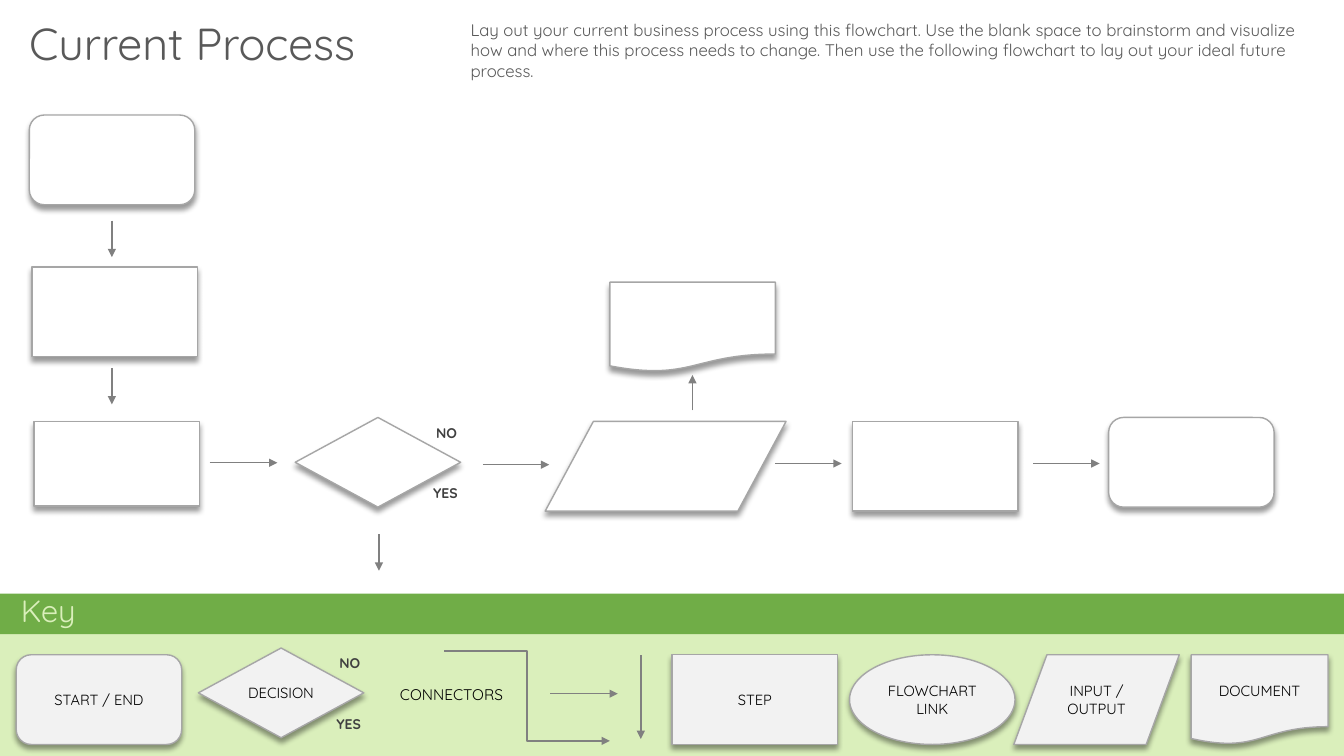
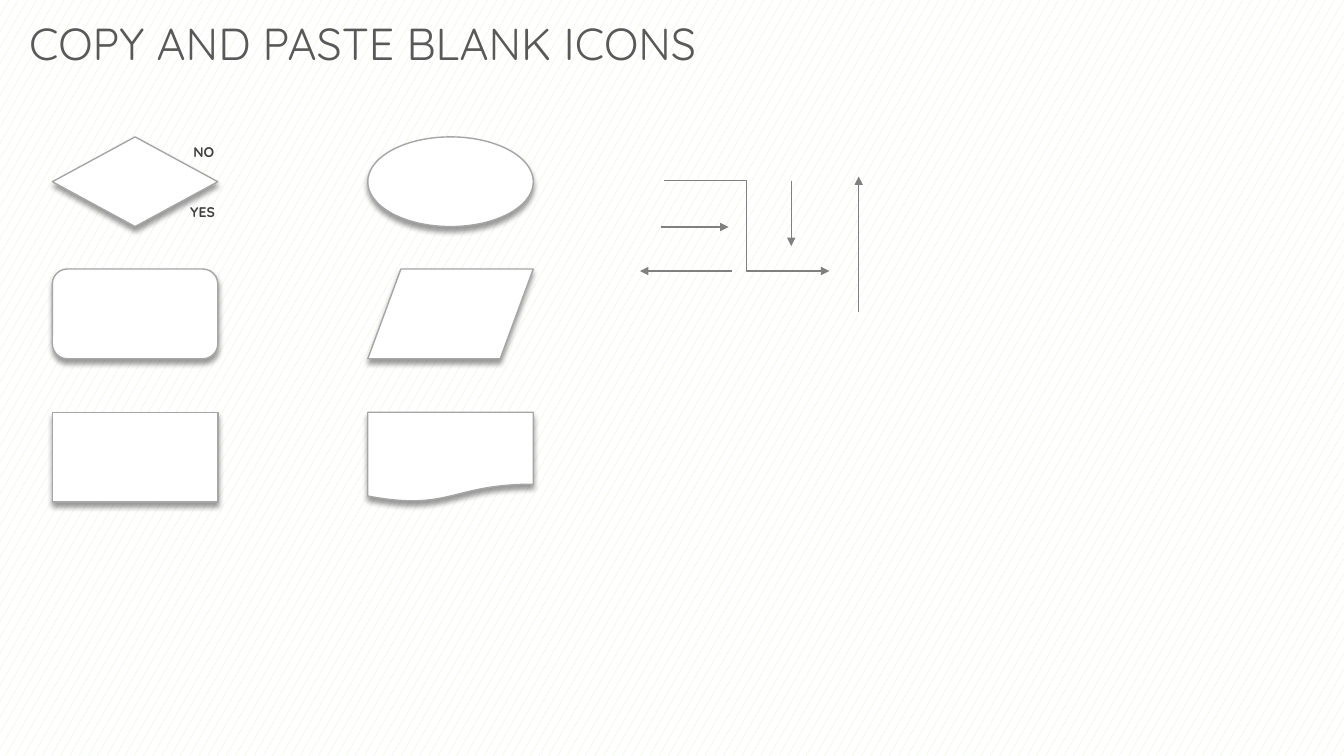
from dataclasses import dataclass

from lxml import etree
from pptx import Presentation
from pptx.dml.color import RGBColor
from pptx.enum.dml import MSO_PATTERN
from pptx.enum.shapes import MSO_CONNECTOR, MSO_SHAPE
from pptx.enum.text import MSO_ANCHOR, MSO_AUTO_SIZE, PP_ALIGN
from pptx.oxml.ns import qn
from pptx.util import Cm, Pt

STEP = MSO_SHAPE.FLOWCHART_PROCESS
TERMINAL = MSO_SHAPE.FLOWCHART_ALTERNATE_PROCESS
DATA = MSO_SHAPE.FLOWCHART_DATA
DOCUMENT = MSO_SHAPE.FLOWCHART_DOCUMENT
DECISION = MSO_SHAPE.FLOWCHART_DECISION
ELLIPSE = MSO_SHAPE.OVAL
RECTANGLE = MSO_SHAPE.RECTANGLE
STRAIGHT = MSO_CONNECTOR.STRAIGHT
ELBOW = MSO_CONNECTOR.ELBOW
CONFETTI = MSO_PATTERN.SMALL_CONFETTI
LEFT, CENTER = PP_ALIGN.LEFT, PP_ALIGN.CENTER
TOP, MIDDLE = MSO_ANCHOR.TOP, MSO_ANCHOR.MIDDLE
NO_FIT = MSO_AUTO_SIZE.NONE


@dataclass(frozen=True)
class Theme:
    font: str = "Quicksand"
    white: RGBColor = RGBColor(0xFF, 0xFF, 0xFF)
    black: RGBColor = RGBColor(0, 0, 0)
    heading: RGBColor = RGBColor(0x59, 0x59, 0x59)
    label: RGBColor = RGBColor(0x40, 0x40, 0x40)
    outline: RGBColor = RGBColor(0xA6, 0xA6, 0xA6)
    arrow: RGBColor = RGBColor(0x80, 0x80, 0x80)
    key_icon: RGBColor = RGBColor(0xF2, 0xF2, 0xF2)
    green: RGBColor = RGBColor(0x70, 0xAD, 0x47)
    pale_green: RGBColor = RGBColor(0xDA, 0xEF, 0xBB)
    title_size: float = 32
    key_size: float = 22
    body_size: float = 12
    connector_size: float = 11
    icon_size: float = 10.5
    label_size: float = 10


theme = Theme()


def write(shape, text, size, color, bold=False, align=LEFT, anchor=TOP, inset=None, wrap=True):
    frame = shape.text_frame
    frame.auto_size = NO_FIT
    frame.word_wrap = wrap
    frame.vertical_anchor = anchor
    if inset is not None:
        frame.margin_left = frame.margin_right = Cm(inset)
        frame.margin_top = frame.margin_bottom = Cm(inset)
    paragraph = frame.paragraphs[0]
    paragraph.alignment = align
    run = paragraph.add_run()
    run.text = text
    run.font.name = theme.font
    run.font.size = Pt(size)
    run.font.bold = bold
    run.font.color.rgb = color


ICON_WIDTH, ICON_HEIGHT = 4.17, 2.26
TEXT_INSET = 0.05
KEY_TOP = 16.5
FLOW_TOP = 10.62
DECISION_LABELS = [("YES", 3.25, 1.52), ("NO", 3.28, 0)]

key_icons = [
    (TERMINAL, 0.41, KEY_TOP, ICON_WIDTH, ICON_HEIGHT, "START / END"),
    (DECISION, 5, 16.33, ICON_WIDTH, ICON_HEIGHT, "DECISION"),
    (STEP, 16.94, KEY_TOP, ICON_WIDTH, ICON_HEIGHT, "STEP"),
    (ELLIPSE, 21.41, KEY_TOP, ICON_WIDTH, ICON_HEIGHT, "FLOWCHART LINK"),
    (DATA, 25.55, KEY_TOP, ICON_WIDTH, ICON_HEIGHT, "INPUT / OUTPUT"),
    (DOCUMENT, 30.02, KEY_TOP, 3.45, ICON_HEIGHT, "DOCUMENT"),
]
process_icons = [
    (TERMINAL, 0.74, 2.9, ICON_WIDTH, ICON_HEIGHT, ""),
    (STEP, 0.81, 6.73, ICON_WIDTH, ICON_HEIGHT, ""),
    (STEP, 0.86, FLOW_TOP, ICON_WIDTH, 2.13, ""),
    (DECISION, 7.44, 10.52, ICON_WIDTH, ICON_HEIGHT, ""),
    (DATA, 13.74, FLOW_TOP, 6.07, ICON_HEIGHT, ""),
    (DOCUMENT, 15.37, 7.11, ICON_WIDTH, ICON_HEIGHT, ""),
    (STEP, 21.49, FLOW_TOP, ICON_WIDTH, ICON_HEIGHT, ""),
    (TERMINAL, 27.94, 10.52, ICON_WIDTH, ICON_HEIGHT, ""),
]
process_arrows = [
    (ELBOW, 11.2, 16.41, 15.37, 18.67),
    (STRAIGHT, 13.87, 17.48, 15.57, 17.48),
    (STRAIGHT, 16.15, 16.51, 16.15, 18.62),
    (STRAIGHT, 2.82, 5.56, 2.82, 6.48),
    (STRAIGHT, 2.82, 9.27, 2.82, 10.19),
    (STRAIGHT, 5.28, 11.66, 6.99, 11.66),
    (STRAIGHT, 9.55, 13.46, 9.55, 14.38),
    (STRAIGHT, 12.17, 11.71, 13.84, 11.71),
    (STRAIGHT, 17.45, 10.34, 17.45, 9.45),
    (STRAIGHT, 19.53, 11.68, 21.21, 11.68),
    (STRAIGHT, 26.04, 11.68, 27.71, 11.68),
]
blank_grid = [
    (3.45, (DECISION, ELLIPSE)),
    (6.78, (TERMINAL, DATA)),
    (10.39, (STEP, DOCUMENT)),
]
blank_icons = [
    (kind, left, top, ICON_WIDTH, ICON_HEIGHT, "")
    for top, kinds in blank_grid
    for left, kind in zip((1.32, 9.27), kinds)
]
blank_arrows = [
    (ELBOW, 16.74, 4.55, 20.9, 6.83),
    (STRAIGHT, 16.66, 5.72, 18.36, 5.72),
    (STRAIGHT, 19.94, 4.55, 19.94, 6.2),
    (STRAIGHT, 18.44, 6.83, 16.13, 6.83),
    (STRAIGHT, 21.64, 7.85, 21.64, 4.45),
]

presentation = Presentation()
presentation.slide_width = Cm(33.87)
presentation.slide_height = Cm(19.05)
title_layout = presentation.slide_layouts[5]
process_slide = presentation.slides.add_slide(title_layout)
blank_slide = presentation.slides.add_slide(title_layout)

background = blank_slide.background.fill
background.patterned()
background.pattern = CONFETTI
background.fore_color.rgb = theme.pale_green
background.back_color.rgb = theme.white

for top, height, color in [(15.06, 3.99, theme.pale_green), (14.96, 1.02, theme.green)]:
    band = process_slide.shapes.add_shape(
        RECTANGLE, 0, Cm(top), presentation.slide_width, Cm(height)
    )
    band.shadow.inherit = False
    band.fill.solid()
    band.fill.fore_color.rgb = color
    band.line.fill.background()

introduction = (
    "Lay out your current business process using this flowchart. Use the blank space to "
    "brainstorm and visualize how and where this process needs to change. Then use the "
    "following flowchart to lay out your ideal future process."
)
for left, top, width, height, text, size, color, wrap in [
    (11.61, 0.38, 21.87, 1.8, introduction, theme.body_size, theme.heading, True),
    (0.28, 14.78, 2.06, 1.19, "Key", theme.key_size, theme.pale_green, True),
    (9.83, 17.15, 3.23, 1.22, "CONNECTORS", theme.connector_size, theme.black, False),
]:
    text_box = process_slide.shapes.add_textbox(Cm(left), Cm(top), Cm(width), Cm(height))
    write(text_box, text, size, color, wrap=wrap)

for slide, heading, title_width, icons, arrows in [
    (process_slide, "Current Process", 9.96, key_icons + process_icons, process_arrows),
    (blank_slide, "COPY AND PASTE BLANK ICONS", 32.99, blank_icons, blank_arrows),
]:
    title = slide.shapes.title
    title.left, title.top = Cm(0.48), Cm(0.28)
    title.width, title.height = Cm(title_width), Cm(1.63)
    write(title, heading, theme.title_size, theme.heading)

    for kind, left, top, width, height, text in icons:
        icon = slide.shapes.add_shape(kind, Cm(left), Cm(top), Cm(width), Cm(height))
        icon.fill.solid()
        icon.fill.fore_color.rgb = theme.key_icon if text else theme.white
        icon.line.color.rgb = theme.outline
        icon.line.width = Pt(1)
        icon.shadow.inherit = False
        effects = icon.element.spPr.find(qn("a:effectLst"))
        shadow = etree.SubElement(
            effects, qn("a:outerShdw"), blurRad=str(Pt(4)), dist=str(Pt(3)),
            dir="5400000", algn="t", rotWithShape="0",
        )
        shadow_color = etree.SubElement(shadow, qn("a:srgbClr"), val=str(theme.black))
        etree.SubElement(shadow_color, qn("a:alpha"), val="40000")
        if text:
            write(icon, text, theme.icon_size, theme.black,
                  align=CENTER, anchor=MIDDLE, inset=TEXT_INSET)
        if kind == DECISION:
            for answer, offset_x, offset_y in DECISION_LABELS:
                label = slide.shapes.add_textbox(
                    Cm(left + offset_x), Cm(top + offset_y), Cm(1.07), Cm(0.76)
                )
                write(label, answer, theme.label_size, theme.label, bold=True,
                      align=CENTER, anchor=MIDDLE, inset=TEXT_INSET)

    for kind, start_x, start_y, end_x, end_y in arrows:
        arrow = slide.shapes.add_connector(
            kind, Cm(start_x), Cm(start_y), Cm(end_x), Cm(end_y)
        )
        arrow.line.color.rgb = theme.arrow
        arrow.line.width = Pt(1)
        properties = arrow.element.spPr
        etree.SubElement(properties.find(qn("a:ln")), qn("a:tailEnd"), type="triangle")
        etree.SubElement(properties, qn("a:effectLst"))

presentation.save("out.pptx")
